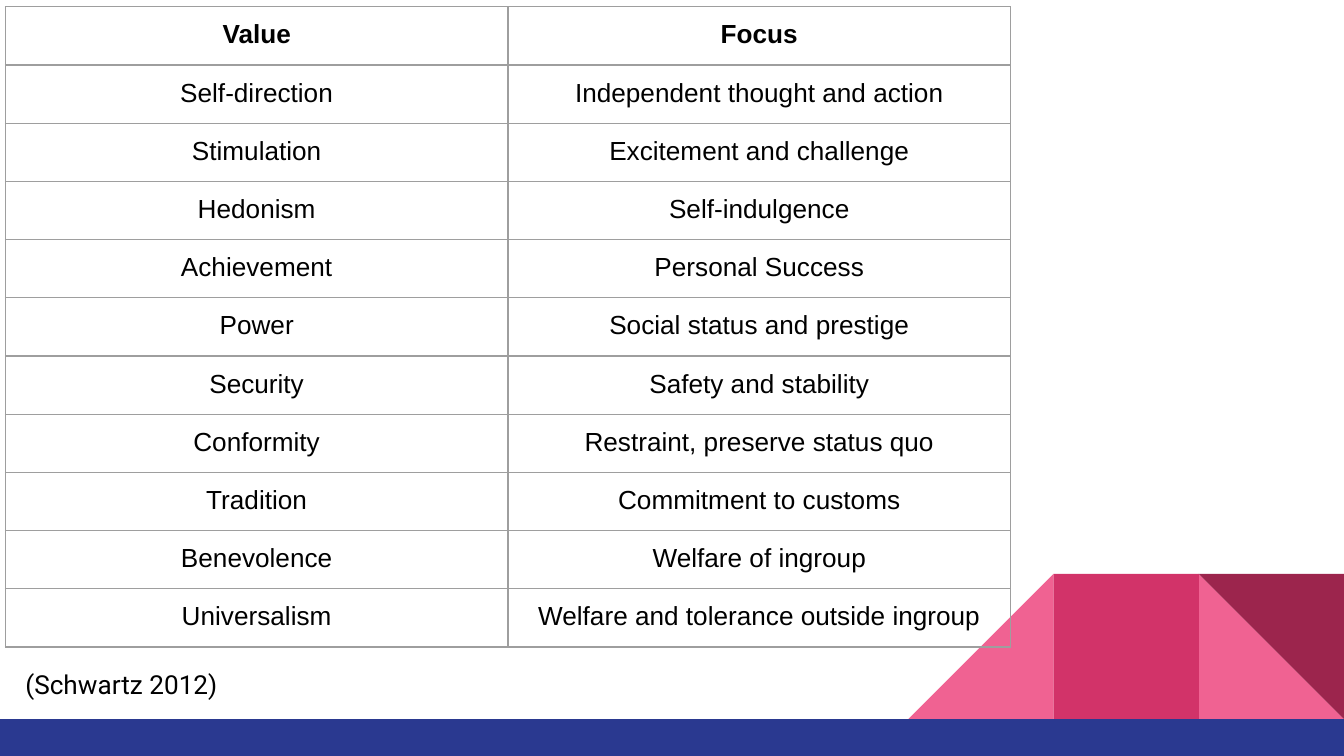
from pptx import Presentation
from pptx.dml.color import RGBColor
from pptx.enum.shapes import MSO_SHAPE
from pptx.enum.text import MSO_AUTO_SIZE, PP_ALIGN
from pptx.oxml.ns import qn
from pptx.util import Inches, Pt
from lxml import etree

RECT = MSO_SHAPE.RECTANGLE
TRIANGLE = MSO_SHAPE.RIGHT_TRIANGLE
CENTER = PP_ALIGN.CENTER
GROW = MSO_AUTO_SIZE.SHAPE_TO_FIT_TEXT

BLACK = RGBColor(0x00, 0x00, 0x00)
WHITE = RGBColor(0xFF, 0xFF, 0xFF)
GRAY = RGBColor(0x9E, 0x9E, 0x9E)
PINK = RGBColor(0xF0, 0x62, 0x92)
ROSE = RGBColor(0xD2, 0x33, 0x69)
WINE = RGBColor(0x9C, 0x25, 0x4D)
BLUE = RGBColor(0x2A, 0x39, 0x90)

VALUES = [
    ("Value", "Focus"),
    ("Self-direction", "Independent thought and action"),
    ("Stimulation", "Excitement and challenge"),
    ("Hedonism", "Self-indulgence"),
    ("Achievement", "Personal Success"),
    ("Power", "Social status and prestige"),
    ("Security", "Safety and stability"),
    ("Conformity", "Restraint, preserve status quo"),
    ("Tradition", "Commitment to customs"),
    ("Benevolence", "Welfare of ingroup"),
    ("Universalism", "Welfare and tolerance outside ingroup"),
]
COL, ROW = 3.74, 0.4333
SIDE, TOP = 1.08, 4.27


def add_block(slide, kind, left, top, width, height, color, turn=0, flip=False):
    block = slide.shapes.add_shape(
        kind, Inches(left), Inches(top), Inches(width), Inches(height))
    block.shadow.inherit = False
    block.fill.solid()
    block.fill.fore_color.rgb = color
    block.line.fill.background()
    block.rotation = turn
    if flip:
        block.element.spPr.get_or_add_xfrm().set("flipH", "1")


def set_text(item, frame, text, font, bold=False):
    """Fill a cell or text box, with equal margins all round."""
    item.margin_left = item.margin_right = Inches(0.1)
    item.margin_top = item.margin_bottom = Inches(0.1)
    frame.text = text
    style = frame.paragraphs[0].runs[0].font
    style.name = font
    style.size = Pt(14)
    style.bold = bold
    style.color.rgb = BLACK


def add_border(cell):
    props = cell._tc.get_or_add_tcPr()
    for spot, side in enumerate(("lnL", "lnR", "lnT", "lnB")):
        line = etree.Element(qn("a:" + side), w=str(Pt(0.75)))
        fill = etree.SubElement(line, qn("a:solidFill"))
        etree.SubElement(fill, qn("a:srgbClr"), val=str(GRAY))
        props.insert(spot, line)


def add_grid(slide, rows, left, top):
    table = slide.shapes.add_table(
        len(rows), 2, Inches(left), Inches(top),
        Inches(2 * COL), Inches(len(rows) * ROW)).table
    table.first_row = table.horz_banding = False
    for col in table.columns:
        col.width = Inches(COL)
    for r, texts in enumerate(rows):
        table.rows[r].height = Inches(ROW)
        for c, text in enumerate(texts):
            cell = table.cell(r, c)
            set_text(cell, cell.text_frame, text, "Arial", bold=r == 0)
            cell.text_frame.paragraphs[0].alignment = CENTER
            cell.fill.background()
            add_border(cell)


def add_note(slide, text, left, top, width, height):
    frame = slide.shapes.add_textbox(
        Inches(left), Inches(top), Inches(width), Inches(height)).text_frame
    frame.word_wrap = True
    frame.auto_size = GROW
    set_text(frame, frame, text, "Roboto")


def main():
    deck = Presentation()
    deck.slide_width, deck.slide_height = Inches(10), Inches(5.625)
    slide = deck.slides.add_slide(deck.slide_layouts[6])
    slide.background.fill.solid()
    slide.background.fill.fore_color.rgb = WHITE

    # Corner shapes: three equal squares ending at the right edge
    first, second, third = (10 - n * SIDE for n in (3, 2, 1))
    add_block(slide, TRIANGLE, third, TOP, SIDE, SIDE, PINK)
    add_block(slide, TRIANGLE, first, TOP, SIDE, SIDE, PINK, flip=True)
    add_block(slide, RECT, second, TOP, SIDE, SIDE, ROSE)
    add_block(slide, TRIANGLE, third, TOP, SIDE, SIDE, WINE, turn=180)

    # Bottom band
    add_block(slide, RECT, 0, TOP + SIDE, 10, 0.28, BLUE)

    # Values and their source
    add_grid(slide, VALUES, 0.04, 0.05)
    add_note(slide, "(Schwartz 2012)", 0.09, 4.87, 2.52, 0.44)

    deck.save("out.pptx")


if __name__ == "__main__":
    main()
